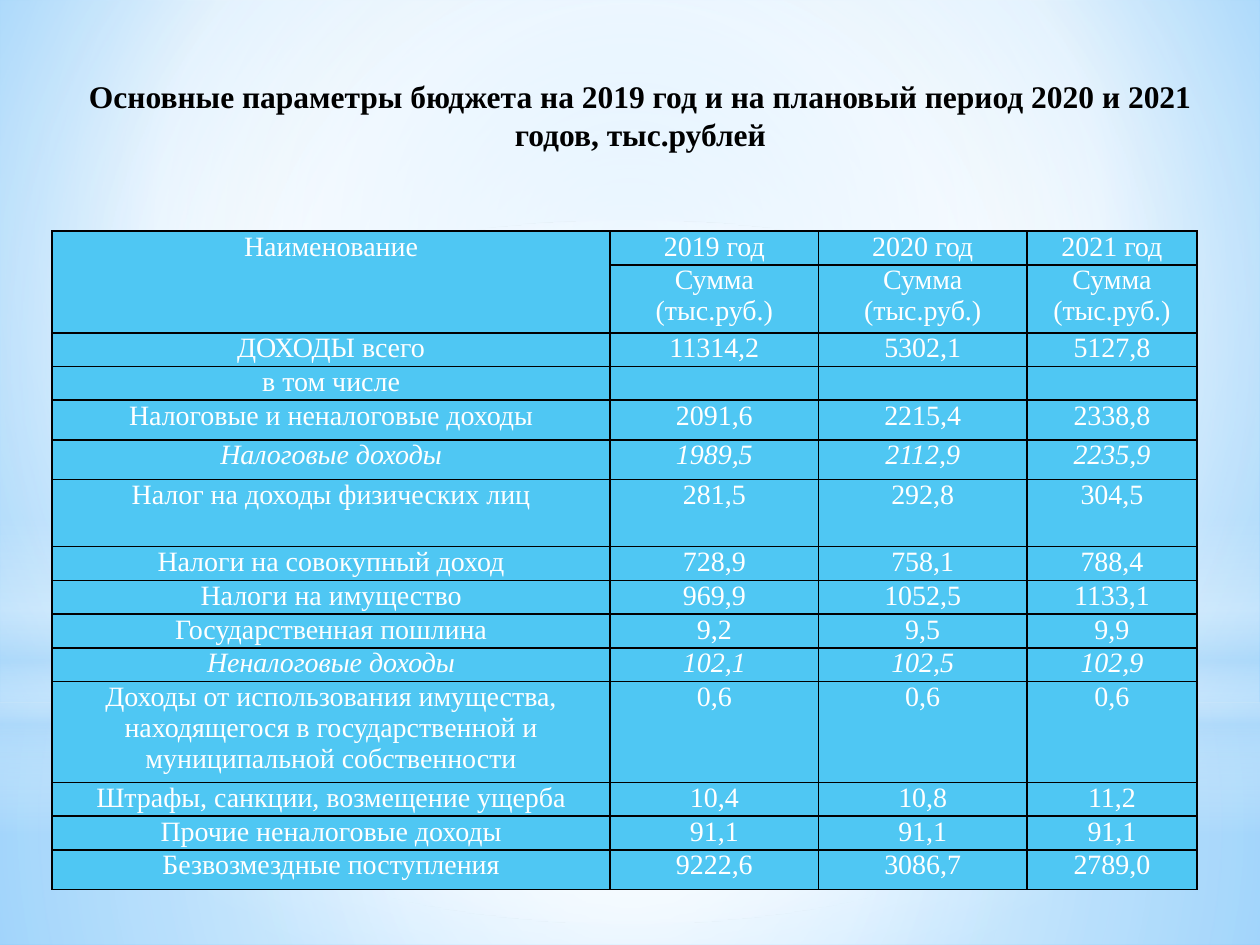
import pptx
import pptx.util
import pptx.oxml
import pptx.oxml.ns
import pptx.dml.color
import pptx.enum.shapes
import pptx.enum.text

Cm = pptx.util.Cm
Pt = pptx.util.Pt
qn = pptx.oxml.ns.qn
KIND = pptx.enum.shapes.MSO_SHAPE
CENTER = pptx.enum.text.PP_ALIGN.CENTER
SPACE = pptx.oxml.ns.nsdecls("a")

COLORS = {"ink": "000000", "white": "FFFFFF", "cell": "4FC7F3",
          "sky": "9ED5FF", "blue": "5BB9FF", "pale": "B4DCFA"}

TITLE = "Основные параметры бюджета на 2019 год и на плановый период 2020 и 2021 годов, тыс.рублей"
SUM = "Сумма (тыс.руб.)"
ROWS = [
    (0.67, "Наименование", "2019 год", "2020 год", "2021 год"),
    (1.37, "", SUM, SUM, SUM),
    (0.68, "ДОХОДЫ всего", "11314,2", "5302,1", "5127,8"),
    (0.68, "в том числе", "", "", ""),
    (0.8, "Налоговые и неналоговые доходы", "2091,6", "2215,4", "2338,8"),
    (0.8, "Налоговые доходы", "1989,5", "2112,9", "2235,9"),
    (1.35, "Налог на доходы физических лиц", "281,5", "292,8", "304,5"),
    (0.68, "Налоги на совокупный доход", "728,9", "758,1", "788,4"),
    (0.68, "Налоги на имущество", "969,9", "1052,5", "1133,1"),
    (0.68, "Государственная пошлина", "9,2", "9,5", "9,9"),
    (0.68, "Неналоговые доходы", "102,1", "102,5", "102,9"),
    (2.02, "Доходы от использования имущества, находящегося в государственной "
           "и муниципальной собственности", "0,6", "0,6", "0,6"),
    (0.68, "Штрафы, санкции, возмещение ущерба", "10,4", "10,8", "11,2"),
    (0.68, "Прочие неналоговые доходы", "91,1", "91,1", "91,1"),
    (0.8, "Безвозмездные поступления", "9222,6", "3086,7", "2789,0"),
]
COLS = [11.25, 4.2, 4.2, 3.43]
HEADS = 4
SLANTED = {"Налоговые доходы", "Неналоговые доходы"}

MID = (50, 50, 50, 50)
BACK = [(0, "sky", 100), (60, "white", 100), (100, "blue", 100)]
GLOWS = [
    (KIND.RECTANGLE, 14.17, 4.88, MID,
     [(0, "white", 91), (37, "white", 76), (100, "pale", 79)]),
    (KIND.RECTANGLE, 0, 14.17, MID,
     [(0, "white", 89), (48, "white", 62), (100, "pale", 79)]),
    (KIND.RECTANGLE, 10.46, 6.35, None,
     [(0, "white", 0), (29, "white", 30), (45, "pale", 40),
      (55, "white", 26), (65, "pale", 60), (100, "white", 0)]),
    (KIND.OVAL, 4.45, 14.17, MID, [(0, "white", 100), (56, "white", 0)]),
]


def rgb(name):
    return pptx.dml.color.RGBColor.from_string(COLORS[name])


def apply(thing, values):
    for name, value in values.items():
        setattr(thing, name, value)


def blend(fill, root, stops, focus):
    fill.gradient()
    old = root.find(".//" + qn("a:gradFill"))
    marks = "".join(
        f'<a:gs pos="{pos * 1000}"><a:srgbClr val="{COLORS[tone]}">'
        f'<a:alpha val="{alpha * 1000}"/></a:srgbClr></a:gs>'
        for pos, tone, alpha in stops)
    if focus:
        sides = " ".join(f'{side}="{at * 1000}"' for side, at in zip("ltrb", focus))
        course = f'<a:path path="circle"><a:fillToRect {sides}/></a:path>'
    else:
        course = '<a:lin ang="5400000" scaled="0"/>'
    new = pptx.oxml.parse_xml(
        f'<a:gradFill {SPACE} rotWithShape="1">'
        f'<a:gsLst>{marks}</a:gsLst>{course}</a:gradFill>')
    old.getparent().replace(old, new)


def write(frame, text, tone, size, font):
    line = frame.paragraphs[0]
    line.alignment = CENTER
    if text:
        run = line.add_run()
        run.text = text
        apply(run.font, {"name": "Times New Roman", "size": Pt(size), **font})
        run.font.color.rgb = rgb(tone)
    else:
        line._p.append(pptx.oxml.parse_xml(
            f'<a:endParaRPr {SPACE} sz="{size * 100}">'
            '<a:latin typeface="Times New Roman"/></a:endParaRPr>'))


def edge(cell):
    props = cell._tc.get_or_add_tcPr()
    for spot, side in enumerate("LRTB"):
        props.insert(spot, pptx.oxml.parse_xml(
            f'<a:ln{side} {SPACE} w="12700"><a:solidFill>'
            f'<a:srgbClr val="{COLORS["ink"]}"/></a:solidFill></a:ln{side}>'))


def main():
    deck = pptx.Presentation()
    apply(deck, {"slide_width": Cm(25.4), "slide_height": Cm(19.05)})
    slide = deck.slides.add_slide(deck.slide_layouts[6])
    blend(slide.background.fill, slide.element, BACK, (20, 10, 20, 60))

    for kind, top, height, focus, stops in GLOWS:
        glow = slide.shapes.add_shape(kind, 0, Cm(top), deck.slide_width, Cm(height))
        glow.shadow.inherit = False
        glow.line.fill.background()
        blend(glow.fill, glow.element, stops, focus)

    frame = slide.shapes.add_textbox(Cm(1.06), Cm(1.42), Cm(23.7), Cm(1.8)).text_frame
    apply(frame, {"word_wrap": True,
                  "vertical_anchor": pptx.enum.text.MSO_ANCHOR.MIDDLE})
    write(frame, TITLE, "ink", 18, {"bold": True})

    total = sum(row[0] for row in ROWS)
    grid = slide.shapes.add_table(len(ROWS), len(COLS), Cm(1.05), Cm(4.66),
                                  Cm(sum(COLS)), Cm(total)).table
    apply(grid, {"first_row": False, "horz_banding": False})
    for col, width in zip(grid.columns, COLS):
        col.width = Cm(width)
    for r, (height, *texts) in enumerate(ROWS):
        grid.rows[r].height = Cm(height)
        pad = Cm(0.13 if r < HEADS else 0.18)
        for c, text in enumerate(texts):
            cell = grid.cell(r, c)
            apply(cell, {"margin_left": pad, "margin_right": pad,
                         "margin_top": 0, "margin_bottom": 0})
            cell.fill.solid()
            cell.fill.fore_color.rgb = rgb("cell")
            edge(cell)
            write(cell.text_frame, text, "white", 16,
                  {"italic": texts[0] in SLANTED})
    grid.cell(0, 0).merge(grid.cell(1, 0))
    deck.save("out.pptx")


if __name__ == "__main__":
    main()
